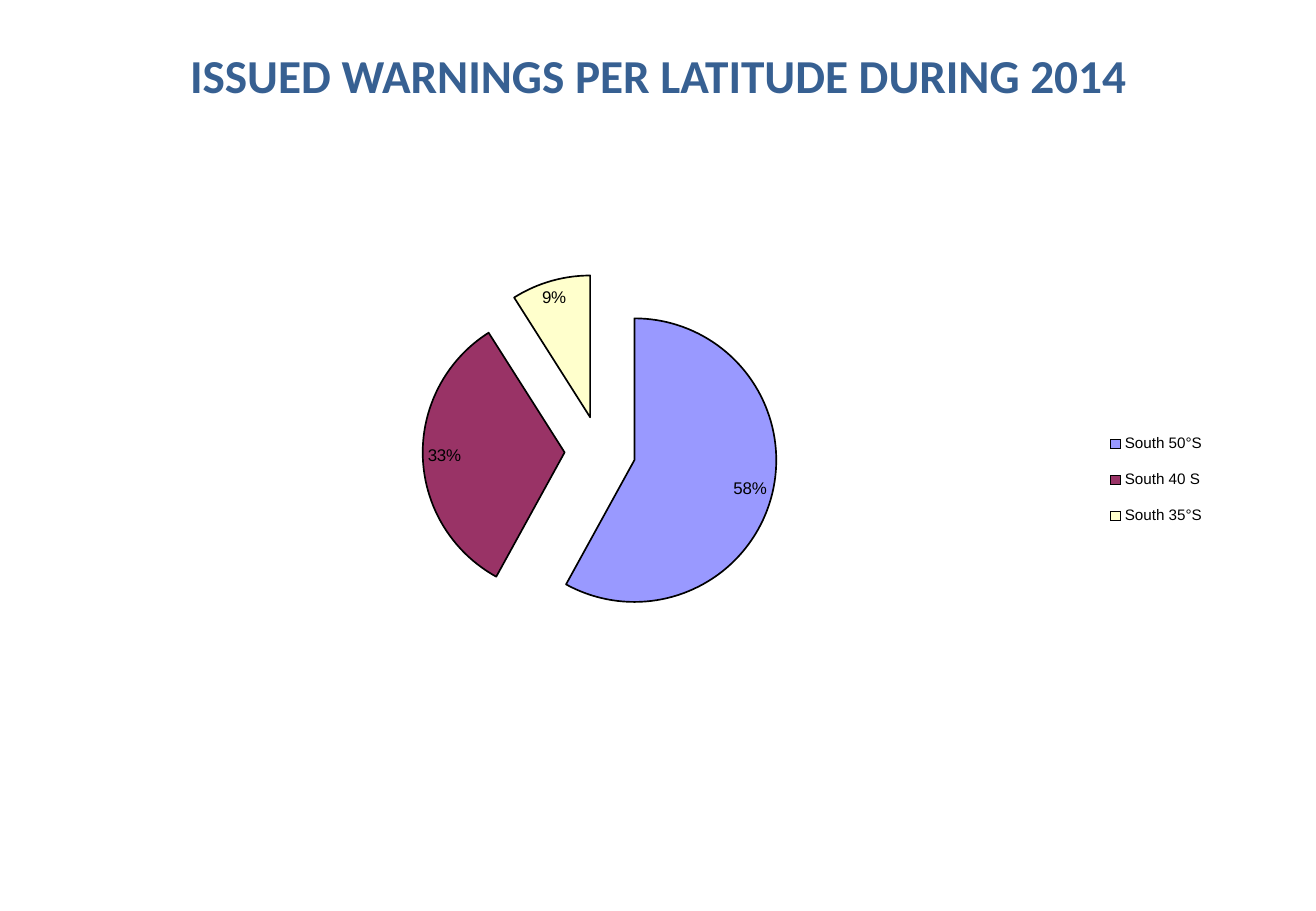
"""Build the slide on warnings issued per latitude in 2014."""
from lxml import etree
from pptx import Presentation
from pptx import util as u
from pptx.chart.data import CategoryChartData
from pptx.dml.color import RGBColor
from pptx.enum import chart as ch, text
from pptx.oxml.ns import qn

PX = 9144
HUES = {"title": "376092", "ink": "000000", "paper": "FFFFFF",
        "south50": "9999FF", "south40": "993366", "south35": "FFFFCC"}
ZONES = [("South 50°S", 58, "south50"),
         ("South 40 S", 33, "south40"),
         ("South 35°S", 9, "south35")]


def px(*nums):
    return [u.Emu(n * PX) for n in nums]


def hue(name):
    return RGBColor.from_string(HUES[name])


def style(font, face, size, name):
    font.name, font.size = face, u.Pt(size)
    font.color.rgb = hue(name)


def add_title(slide, words, box):
    shape = slide.shapes.title
    shape.left, shape.top, shape.width, shape.height = px(*box)
    frame = shape.text_frame
    frame.word_wrap = True
    frame.auto_size = text.MSO_AUTO_SIZE.NONE
    frame.vertical_anchor = text.MSO_ANCHOR.MIDDLE
    para = frame.paragraphs[0]
    para.alignment = text.PP_ALIGN.CENTER
    run = para.add_run()
    run.text = words
    style(run.font, "Calibri", 28, "title")
    run.font.bold = True


def set_place(part, spot, area, inner=False):
    for old in part.findall(qn("c:layout")):
        part.remove(old)
    layout = etree.Element(qn("c:layout"))
    part.insert(spot, layout)
    manual = etree.SubElement(layout, qn("c:manualLayout"))
    marks = [("layoutTarget", "inner")] if inner else []
    marks += [("xMode", "edge"), ("yMode", "edge"), *zip("xywh", area)]
    for tag, val in marks:
        etree.SubElement(manual, qn("c:" + tag), val=str(val))


def split_pie(series, gap):
    for (_, _, name), spot in zip(ZONES, range(len(ZONES))):
        form = series.points[spot].format
        form.fill.solid()
        form.fill.fore_color.rgb = hue(name)
        form.line.color.rgb = hue("ink")
        form.line.width = u.Pt(1)
    for look in series._element.xpath("c:dPt/c:spPr"):
        look.addprevious(look.makeelement(qn("c:explosion"), val=str(gap)))


def add_labels(plot):
    plot.has_data_labels = True
    labels = plot.data_labels
    labels.show_value, labels.show_percentage = False, True
    labels.number_format, labels.number_format_is_linked = "0%", False
    labels.position = ch.XL_LABEL_POSITION.BEST_FIT
    style(labels.font, "Arial", 10, "ink")


def add_legend(chart, area):
    chart.has_legend = True
    legend = chart.legend
    legend.position = ch.XL_LEGEND_POSITION.RIGHT
    legend.include_in_layout = False
    style(legend.font, "Arial", 9, "ink")
    set_place(legend._element, 1, area)


def add_pie(slide, box):
    data = CategoryChartData()
    data.categories = [zone for zone, _, _ in ZONES]
    data.add_series("Series 1", [val for _, val, _ in ZONES])
    chart = slide.shapes.add_chart(ch.XL_CHART_TYPE.PIE, *px(*box), data).chart
    chart.has_title = False
    style(chart.font, "Arial", 10, "ink")
    plot = chart.plots[0]
    plot.vary_by_categories = True
    split_pie(plot.series[0], 25)
    add_labels(plot)
    add_legend(chart, (0.9, 0.48, 0.1, 0.2))
    area = chart._chartSpace.chart.plotArea
    set_place(area, 0, (0.11, 0.31, 0.69, 0.45), inner=True)


def main():
    deck = Presentation()
    deck.slide_width, deck.slide_height = px(1083, 750)
    slide = deck.slides.add_slide(deck.slide_layouts[5])
    slide.background.fill.solid()
    slide.background.fill.fore_color.rgb = hue("paper")
    add_title(slide, "ISSUED WARNINGS PER LATITUDE DURING 2014",
              (54, 30, 975, 63))
    add_pie(slide, (73, 94, 925, 519))
    deck.save("out.pptx")


if __name__ == "__main__":
    main()
